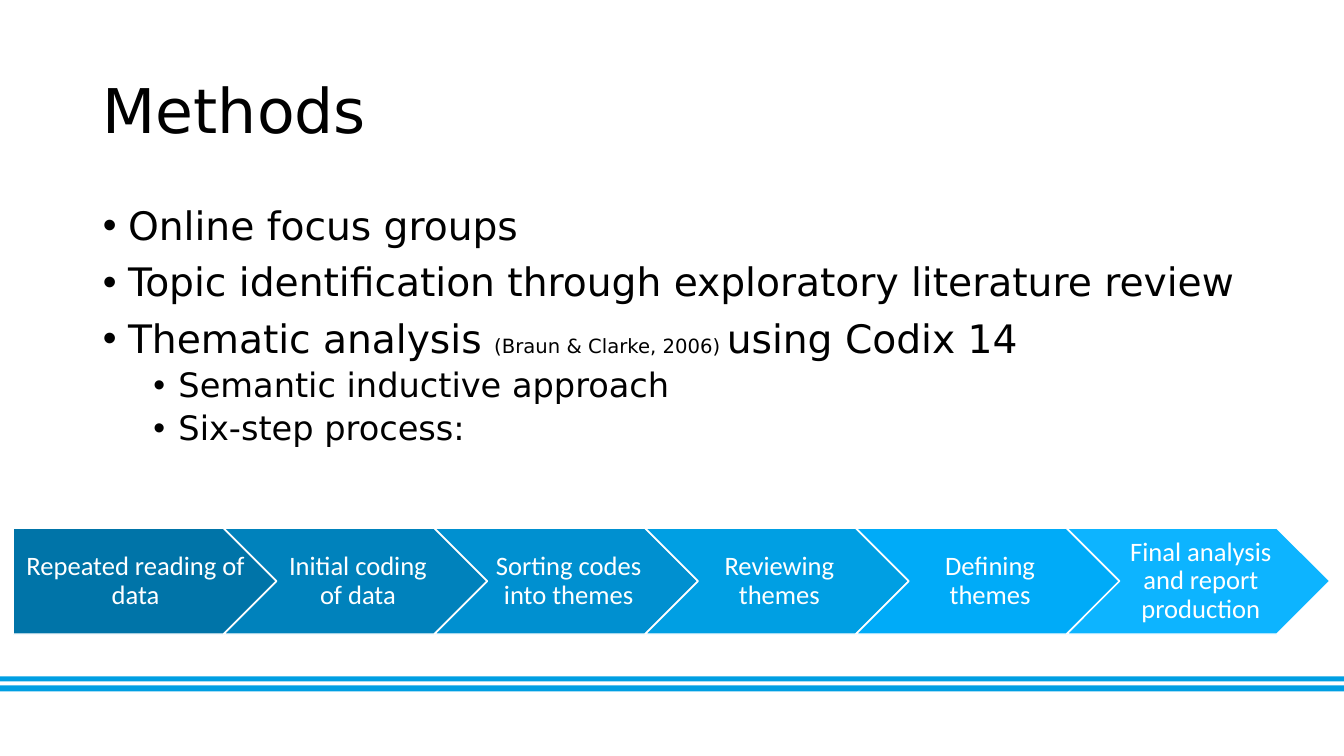
from dataclasses import dataclass

from lxml.etree import SubElement
from pptx import Presentation
from pptx.dml.color import RGBColor
from pptx.enum.shapes import MSO_SHAPE as Preset
from pptx.enum.text import MSO_ANCHOR as Anchor, PP_ALIGN as Align
from pptx.oxml.ns import qn
from pptx.util import Inches, Pt

BLACK = RGBColor(0x00, 0x00, 0x00)
WHITE = RGBColor(0xFF, 0xFF, 0xFF)
BRAND_BLUE = RGBColor(0x00, 0x9F, 0xE3)
HEADING_FONT = "DejaVu Sans"
STEP_FONT = "Calibri"

SLIDE_WIDTH = 13.33
STEP_LEFT, STEP_TOP, STEP_PITCH = 0.13, 5.24, 2.09
STEP_WIDTH, STEP_HEIGHT = 2.61, 1.05


@dataclass(frozen=True)
class Bullet:
    spans: tuple[tuple[str, int], ...]
    level: int = 0


@dataclass(frozen=True)
class Step:
    label: str
    fill: RGBColor


@dataclass(frozen=True)
class Band:
    top: float
    height: float


BULLETS = (
    Bullet((("Online focus groups", 28),)),
    Bullet((("Topic identification through exploratory literature review", 28),)),
    Bullet((("Thematic analysis ", 28), ("(Braun & Clarke, 2006) ", 14),
            ("using Codix 14", 28))),
    Bullet((("Semantic inductive approach", 24),), level=1),
    Bullet((("Six-step process:", 24),), level=1),
)
STEPS = (
    Step("Repeated reading of data", RGBColor(0x00, 0x74, 0xA8)),
    Step("Initial coding of data", RGBColor(0x00, 0x82, 0xBC)),
    Step("Sorting codes into themes", RGBColor(0x00, 0x90, 0xD0)),
    Step("Reviewing themes", BRAND_BLUE),
    Step("Defining themes", RGBColor(0x00, 0xAB, 0xF8)),
    Step("Final analysis and report production", RGBColor(0x0D, 0xB4, 0xFF)),
)
BANDS = (Band(6.8, 0.06), Band(6.71, 0.05))


def style_font(font, name: str, size: float, color: RGBColor) -> None:
    font.name = name
    font.size = Pt(size)
    font.color.rgb = color


def place(shape, left: float, top: float, width: float, height: float) -> None:
    shape.left, shape.top = Inches(left), Inches(top)
    shape.width, shape.height = Inches(width), Inches(height)


def add_preset(page, preset, left: float, top: float, width: float,
               height: float, fill: RGBColor):
    """Add a flat preset shape without outline or shadow."""
    shape = page.shapes.add_shape(preset, Inches(left), Inches(top),
                                  Inches(width), Inches(height))
    shape.shadow.inherit = False
    shape.fill.solid()
    shape.fill.fore_color.rgb = fill
    shape.line.fill.background()
    return shape


def fill_title(title) -> None:
    place(title, 0.92, 0.4, 11.5, 1.45)
    frame = title.text_frame
    frame.text = "Methods"
    frame.vertical_anchor = Anchor.MIDDLE
    para = frame.paragraphs[0]
    para.alignment = Align.LEFT
    para.line_spacing = 0.9
    style_font(para.runs[0].font, HEADING_FONT, 44, BLACK)


def fill_bullets(body) -> None:
    place(body, 0.92, 2, 11.5, 4.76)
    frame = body.text_frame
    for index, bullet in enumerate(BULLETS):
        para = frame.add_paragraph() if index else frame.paragraphs[0]
        para.level = bullet.level
        properties = para._p.get_or_add_pPr()
        properties.set("marL", str(Inches(0.25 + 0.5 * bullet.level)))
        properties.set("indent", str(Inches(-0.25)))
        SubElement(properties, qn("a:buFont"), typeface="Arial")
        SubElement(properties, qn("a:buChar"), char="•")
        para.line_spacing = 0.9
        para.space_before = Pt((5 if bullet.level else 10) if index else 0)
        for text, size in bullet.spans:
            span = para.add_run()
            span.text = text
            style_font(span.font, HEADING_FONT, size, BLACK)


def add_step(page, index: int, step: Step) -> None:
    preset = Preset.CHEVRON if index else Preset.PENTAGON
    arrow = add_preset(page, preset, STEP_LEFT + index * STEP_PITCH, STEP_TOP,
                       STEP_WIDTH, STEP_HEIGHT, step.fill)
    arrow.line.color.rgb = WHITE
    arrow.line.width = Pt(1)
    frame = arrow.text_frame
    frame.text = step.label
    frame.word_wrap = True
    frame.vertical_anchor = Anchor.MIDDLE
    frame.margin_left = Inches(0.08 if index else 0.11)
    frame.margin_right = Inches(0.03)
    frame.margin_top = frame.margin_bottom = Inches(0.06)
    para = frame.paragraphs[0]
    para.alignment = Align.CENTER
    para.line_spacing = 0.9
    style_font(para.runs[0].font, STEP_FONT, 19, WHITE)


def main() -> None:
    deck = Presentation()
    deck.slide_width, deck.slide_height = Inches(SLIDE_WIDTH), Inches(7.5)
    page = deck.slides.add_slide(deck.slide_layouts[1])
    fill_title(page.shapes.title)
    fill_bullets(page.placeholders[1])
    for band in BANDS:
        add_preset(page, Preset.RECTANGLE, 0, band.top, SLIDE_WIDTH,
                   band.height, BRAND_BLUE)
    for index, step in enumerate(STEPS):
        add_step(page, index, step)
    deck.save("out.pptx")


if __name__ == "__main__":
    main()
